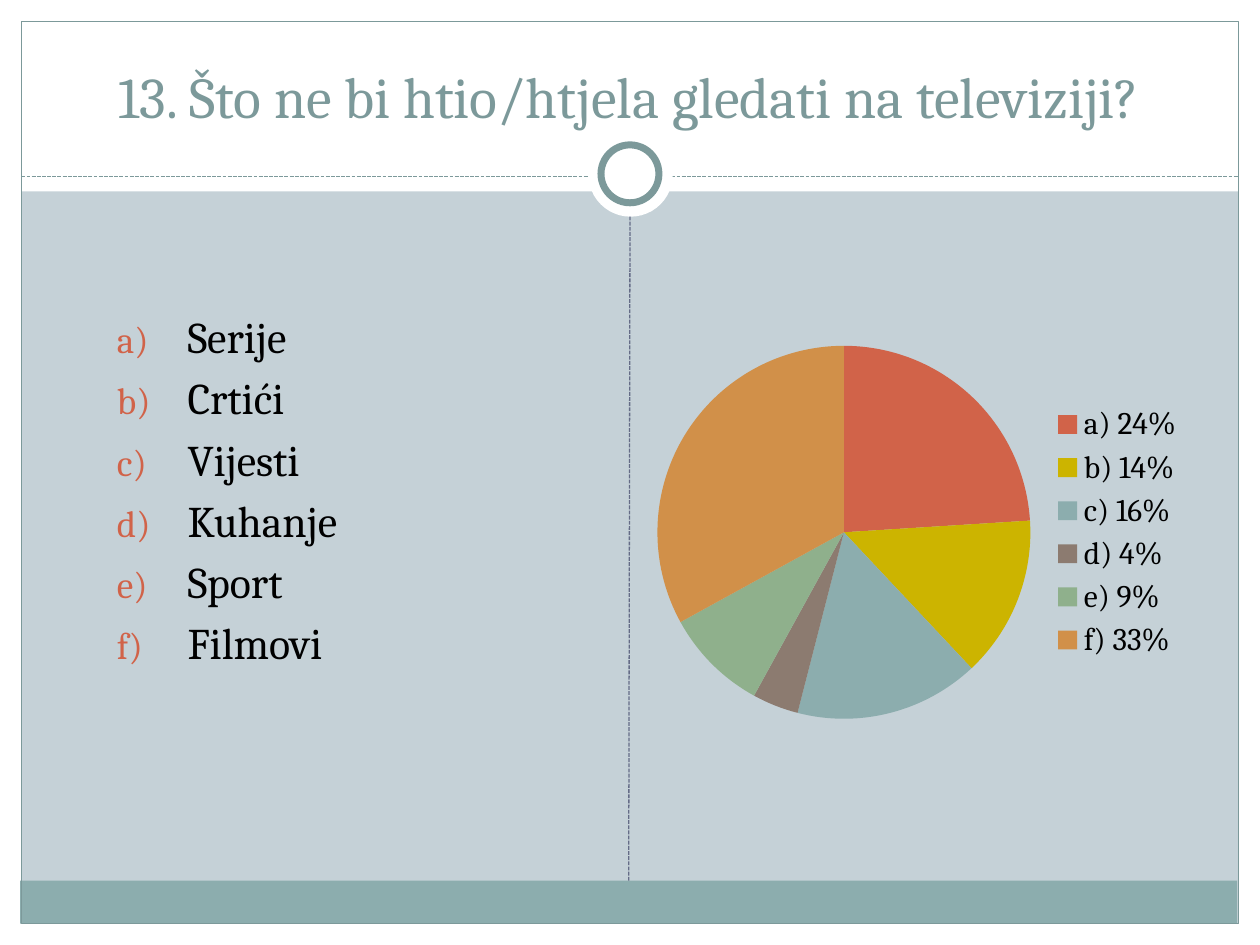
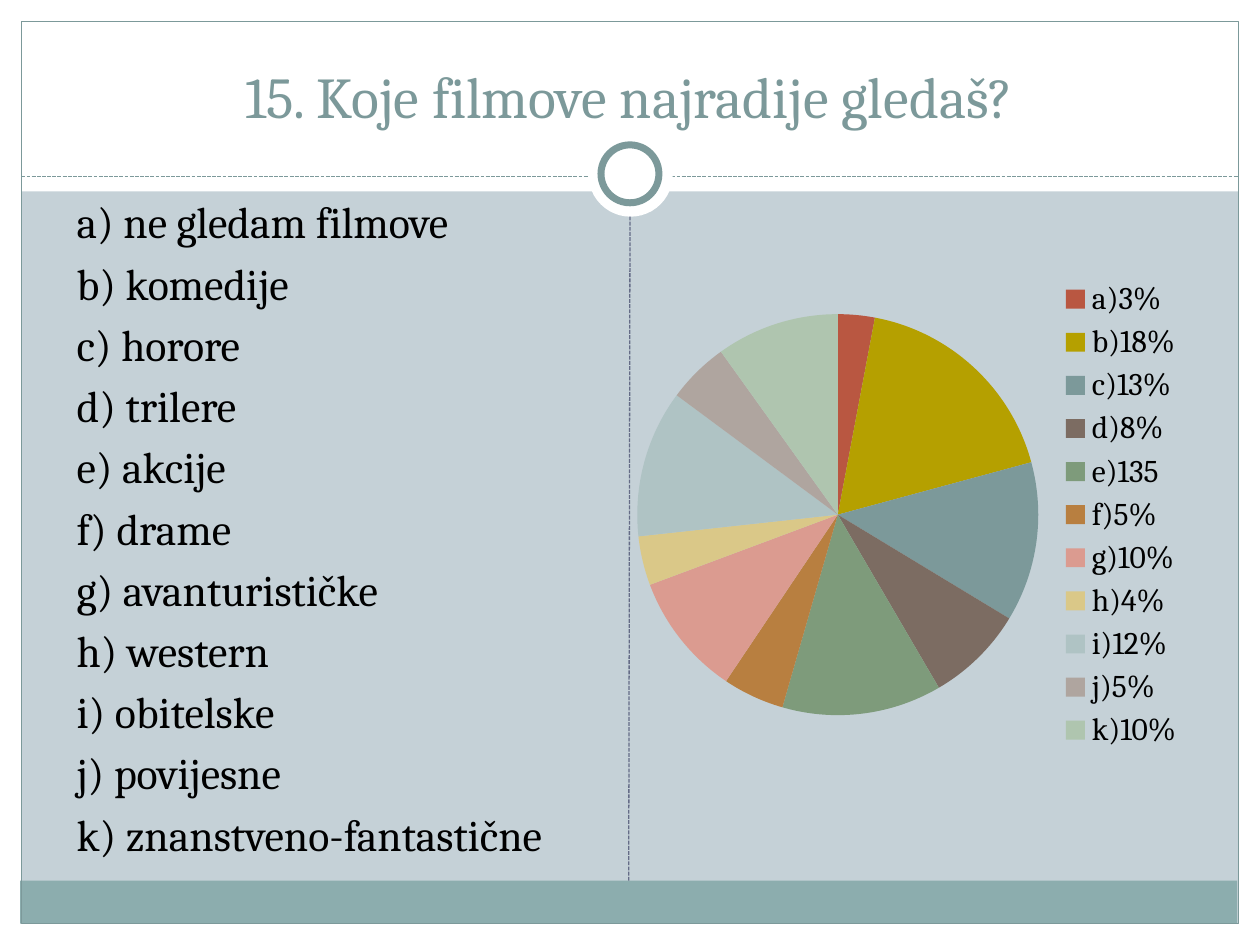
from lxml import etree
from pptx import Presentation
from pptx.chart.data import CategoryChartData
from pptx.dml.color import RGBColor
from pptx.enum.chart import XL_CHART_TYPE, XL_LEGEND_POSITION
from pptx.enum.dml import MSO_LINE
from pptx.enum.shapes import MSO_CONNECTOR, MSO_SHAPE
from pptx.enum.text import MSO_ANCHOR, PP_ALIGN
from pptx.oxml.ns import qn
from pptx.util import Inches, Pt

FONT = "Cambria"
HUES = {
    "back": "C5D1D7", "white": "FFFFFF", "band": "8CADAE", "edge": "7C999A",
    "split": "646B86", "text": "000000", "mark": "D16349",
}
SIX = ["D16349", "CCB400", "8CADAE", "8C7B70", "8FB08C", "D19049"]
ELEVEN = ["B95741", "B5A000", "7C999A", "7C6C62", "7E9B7B", "B87F40",
          "DB9B90", "DAC888", "AFC3C4", "AFA59F", "AFC5AF"]


def rgb(hue):
    return RGBColor.from_string(hue)


def style(font, size, hue):
    font.name = FONT
    font.size = Pt(size)
    font.color.rgb = rgb(hue)


def add_form(slide, kind, box, fill=None, line=None, width=0.75):
    form = slide.shapes.add_shape(kind, *map(Inches, box))
    form.shadow.inherit = False
    if fill:
        form.fill.solid()
        form.fill.fore_color.rgb = rgb(HUES[fill])
    else:
        form.fill.background()
    if line:
        form.line.color.rgb = rgb(HUES[line])
        form.line.width = Pt(width)
    else:
        form.line.fill.background()
    return form


def add_dash(slide, ends, hue):
    dash = slide.shapes.add_connector(MSO_CONNECTOR.STRAIGHT, *map(Inches, ends))
    dash.line.color.rgb = rgb(HUES[hue])
    dash.line.width = Pt(0.75)
    dash.line.dash_style = MSO_LINE.SQUARE_DOT
    # Preset system dash, without the theme shadow
    dash.line._get_or_add_ln().find(qn("a:prstDash")).set("val", "sysDash")
    etree.SubElement(dash._element.spPr, qn("a:effectLst"))
    return dash


def add_frame(slide):
    slide.background.fill.solid()
    slide.background.fill.fore_color.rgb = rgb(HUES["back"])
    rect, oval = MSO_SHAPE.RECTANGLE, MSO_SHAPE.OVAL
    # White margins and header
    for box in [(0, 7.33, 10, 0.17), (0, 0, 10, 1.52),
                (0, 0, 0.17, 7.5), (9.83, 0, 0.17, 7.5)]:
        add_form(slide, rect, box, "white")
    # Footer band and outline
    band = add_form(slide, rect, (0.16, 6.99, 9.66, 0.34), "band")
    add_form(slide, rect, (0.17, 0.17, 9.66, 7.16), line="edge")
    # Header rule and ring
    add_dash(slide, (0.17, 1.4, 9.83, 1.4), "edge")
    add_form(slide, oval, (4.67, 1.05, 0.67, 0.67), "white")
    add_form(slide, oval, (4.77, 1.15, 0.46, 0.46), "white", "edge", 4)
    # Column divider
    split = add_dash(slide, (4.99, 6.99, 5, 1.72), "split")
    split.begin_connect(band, 0)


def add_title(slide, box, text):
    frame = slide.shapes.add_textbox(*map(Inches, box)).text_frame
    frame.word_wrap = True
    frame.vertical_anchor = MSO_ANCHOR.BOTTOM
    para = frame.paragraphs[0]
    para.text = text
    para.alignment = PP_ALIGN.CENTER
    style(para.font, 33, HUES["edge"])


def add_marks(props):
    hue = etree.SubElement(props, qn("a:buClr"))
    etree.SubElement(hue, qn("a:srgbClr"), val=HUES["mark"])
    etree.SubElement(props, qn("a:buSzPct"), val="85000")
    etree.SubElement(props, qn("a:buFont"), typeface=FONT)
    etree.SubElement(props, qn("a:buAutoNum"), type="alphaLcParenR")


def add_list(slide, box, items, indent, marks):
    frame = slide.shapes.add_textbox(*map(Inches, box)).text_frame
    frame.word_wrap = True
    for i, item in enumerate(items):
        para = frame.add_paragraph() if i else frame.paragraphs[0]
        para.text = item
        props = para._p.get_or_add_pPr()
        props.set("marL", str(Inches(indent)))
        props.set("indent", str(-Inches(indent)))
        gap = etree.SubElement(props, qn("a:spcBef"))
        etree.SubElement(gap, qn("a:spcPct"), val="20000")
        if marks:
            add_marks(props)
        style(para.font, 25, HUES["text"])


def add_pie(slide, box, names, vals, hues):
    data = CategoryChartData()
    data.categories = names
    data.add_series("Series 1", vals)
    chart = slide.shapes.add_chart(
        XL_CHART_TYPE.PIE, *map(Inches, box), data).chart
    style(chart.font, 18, HUES["text"])
    chart.has_title = False
    chart.has_legend = True
    chart.legend.position = XL_LEGEND_POSITION.RIGHT
    chart.legend.include_in_layout = False
    plot = chart.plots[0]
    plot.vary_by_categories = True
    for i, hue in enumerate(hues):
        fill = plot.series[0].points[i].format.fill
        fill.solid()
        fill.fore_color.rgb = rgb(hue)


def add_page(deck, title, items, pie, marks=False):
    slide = deck.slides.add_slide(deck.slide_layouts[6])
    add_frame(slide)
    add_title(slide, (0.33, 0.25, 9.33, 0.83), title)
    add_list(slide, *items, marks)
    add_pie(slide, *pie)


def main():
    deck = Presentation()
    deck.slide_width, deck.slide_height = Inches(10), Inches(7.5)

    # Unwanted programmes
    shows = ["Serije", "Crtići", "Vijesti", "Kuhanje", "Sport", "Filmovi"]
    vals = [24, 14, 16, 4, 9, 33]
    names = [f"{key}) {val}%" for key, val in zip("abcdef", vals)]
    add_page(deck, "13. Što ne bi htio/htjela gledati na televiziji?",
             ((0.83, 2.41, 3.92, 4.21), shows, 0.56),
             ((5.08, 1.75, 4.42, 4.95), names, vals, SIX), marks=True)

    # Favourite films
    films = ["ne gledam filmove", "komedije", "horore", "trilere", "akcije",
             "drame", "avanturističke", "western", "obitelske", "povijesne",
             "znanstveno-fantastične"]
    keys = "abcdefghijk"
    films = [f"{key}) {film}" for key, film in zip(keys, films)]
    vals = [3, 18, 13, 8, 13, 5, 10, 4, 12, 5, 10]
    names = [f"{key}){val}%" for key, val in zip(keys, vals)]
    names[4] = "e)135"
    add_page(deck, "15. Koje filmove najradije gledaš?",
             ((0.51, 1.5, 4.24, 5.12), films, 0.3),
             ((4.92, 1.47, 4.58, 5.23), names, vals, ELEVEN))

    deck.save("out.pptx")


if __name__ == "__main__":
    main()
